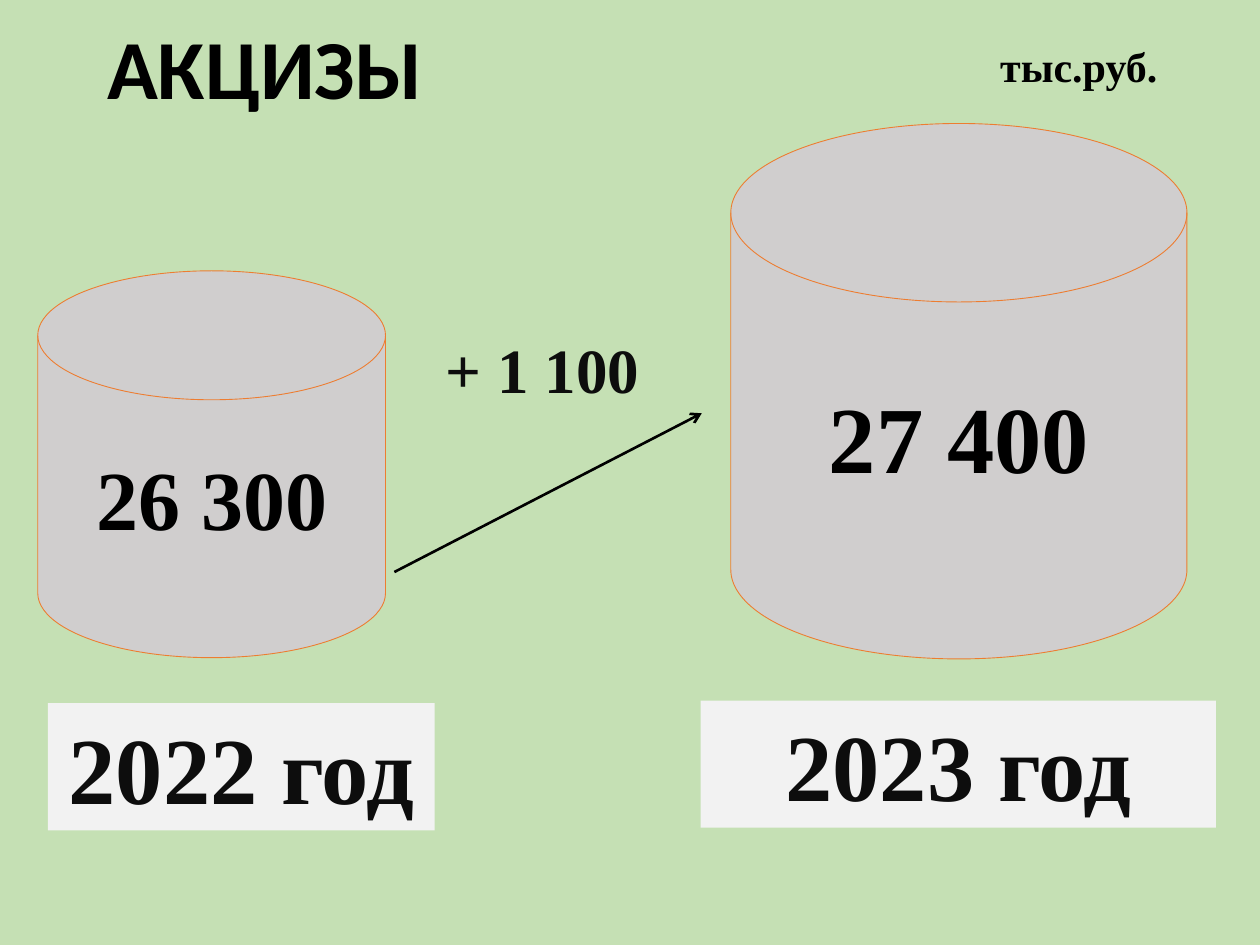
from pptx import Presentation
from pptx.dml.color import RGBColor
from pptx.enum.shapes import MSO_CONNECTOR as Connector, MSO_SHAPE as Shape
from pptx.enum.text import MSO_ANCHOR as Anchor, MSO_AUTO_SIZE as AutoSize, PP_ALIGN as Align
from pptx.oxml.ns import qn
from pptx.util import Inches, Pt
from lxml.etree import SubElement

COLORS = {name: RGBColor.from_string(value) for name, value in {
    "background": "C5E0B4", "cylinder": "D0CECE", "outline": "ED7D31",
    "label": "F2F2F2", "black": "000000", "dark": "0D0D0D",
}.items()}
SERIF = "Times New Roman"


def write(box, text, size, color, align=Align.LEFT, font=SERIF):
    frame = box.text_frame
    for name, value in {"word_wrap": True, "auto_size": AutoSize.NONE,
                        "vertical_anchor": Anchor.MIDDLE}.items():
        setattr(frame, name, value)
    para = frame.paragraphs[0]
    para.alignment = align
    span = para.add_run()
    span.text = text
    for name, value in {"name": font, "size": Pt(size), "bold": True}.items():
        setattr(span.font, name, value)
    span.font.color.rgb = COLORS[color]


def add_block(kind, place, fill, outline=None):
    block = page.shapes.add_shape(kind, *map(Inches, place))
    block.shadow.inherit = False
    block.fill.solid()
    block.fill.fore_color.rgb = COLORS[fill]
    if outline:
        block.line.color.rgb = COLORS[outline]
        block.line.width = Pt(0.5)
    else:
        block.line.fill.background()
    return block


# Page
deck = Presentation()
deck.slide_width, deck.slide_height = Inches(10), Inches(7.5)
page = deck.slides.add_slide(deck.slide_layouts[5])
page.background.fill.solid()
page.background.fill.fore_color.rgb = COLORS["background"]

# Title
title = page.shapes.title
for name, value in {"left": 0.75, "top": 0.07, "width": 3.86, "height": 0.91}.items():
    setattr(title, name, Inches(value))
write(title, "АКЦИЗЫ", 48, "black", font="Calibri")

# One cylinder and one label for each year
years = [
    ("27 400", 54, (5.8, 0.98, 3.62, 4.25), "2023 год", (5.56, 5.56, 4.09, 1.01)),
    ("26 300", 48, (0.3, 2.15, 2.76, 3.07), "2022 год", (0.38, 5.58, 3.07, 1.01)),
]
for amount, size, cylinder_place, year, label_place in years:
    cylinder = add_block(Shape.FLOWCHART_MAGNETIC_DISK, cylinder_place, "cylinder", "outline")
    write(cylinder, amount, size, "black", Align.CENTER)
    label = add_block(Shape.RECTANGLE, label_place, "label")
    write(label, year, 54, "dark", Align.CENTER)

# Growth and unit captions
captions = [
    ("+ 1 100", 36, "dark", (3.44, 2.57, 1.97, 0.71)),
    ("тыс.руб.", 24, "black", (7.84, 0.27, 1.57, 0.5)),
]
for text, size, color, place in captions:
    write(page.shapes.add_textbox(*map(Inches, place)), text, size, color)

# Growth arrow
arrow = page.shapes.add_connector(Connector.STRAIGHT, *map(Inches, (3.13, 4.54, 5.57, 3.28)))
arrow.line.color.rgb = COLORS["black"]
arrow.line.width = Pt(1.5)
SubElement(arrow.line._get_or_add_ln(), qn("a:tailEnd"), type="arrow")
SubElement(arrow._element.spPr, qn("a:effectLst"))

deck.save("out.pptx")
